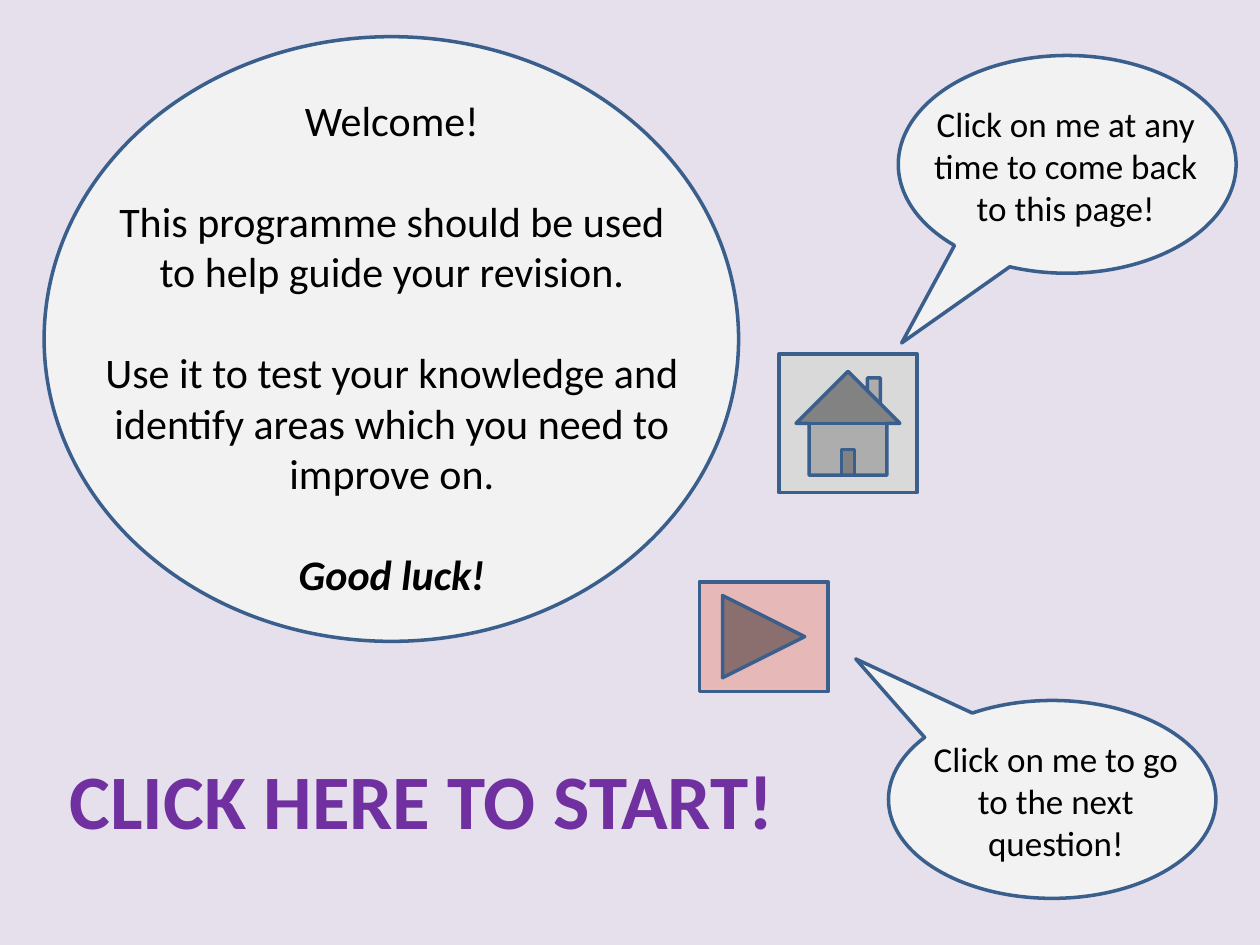
"""Builds the welcome slide of a revision quiz, with its navigation buttons."""
from pptx import Presentation
from pptx.dml.color import RGBColor
from pptx.enum.shapes import MSO_SHAPE
from pptx.enum.text import MSO_ANCHOR, PP_ALIGN
from pptx.util import Cm, Pt

ELLIPSE = MSO_SHAPE.OVAL
CALLOUT = MSO_SHAPE.OVAL_CALLOUT
HOME = MSO_SHAPE.ACTION_BUTTON_HOME
NEXT = MSO_SHAPE.ACTION_BUTTON_FORWARD_OR_NEXT
MIDDLE = MSO_ANCHOR.MIDDLE
CENTER = PP_ALIGN.CENTER

LILAC = RGBColor(0xE6, 0xE0, 0xEC)
PALE_GREY = RGBColor(0xF2, 0xF2, 0xF2)
GREY = RGBColor(0xD9, 0xD9, 0xD9)
PINK = RGBColor(0xE6, 0xB9, 0xB8)
BLUE = RGBColor(0x3A, 0x5F, 0x8C)
BLACK = RGBColor(0, 0, 0)
PURPLE = RGBColor(0x70, 0x30, 0xA0)

FONT = "Calibri"
PARAGRAPH_GAP = 29

WELCOME = [
    "Welcome!",
    "This programme should be used to help guide your revision.",
    "Use it to test your knowledge and identify areas which you need to improve on.",
    "Good luck!",
]
HOME_HINT = ["Click on me at any time to come back to this page!"]
NEXT_HINT = ["Click on me to go to the next question!"]
START = ["CLICK HERE TO START!"]

SHAPES = [
    (ELLIPSE, (0.89, 0.74, 14, 12.19), PALE_GREY, 0, ()),
    (HOME, (15.7, 7.14, 2.79, 2.79), GREY, 0, ()),
    (CALLOUT, (18.11, 1.12, 6.81, 4.39), PALE_GREY, 0, (-0.49, 0.82)),
    (NEXT, (14.1, 11.73, 2.59, 2.21), PINK, 0, ()),
    (CALLOUT, (17.91, 14.12, 6.6, 3.99), PALE_GREY, 180, (0.6, 0.71)),
]
TEXTS = [
    (WELCOME, (1.7, 1.73, 12.4, 10.52), 24, BLACK),
    (HOME_HINT, (18.49, 1.93, 5.99, 2.82), 20, BLACK),
    (NEXT_HINT, (18.29, 14.73, 5.99, 2.82), 20, BLACK),
    (START, (0.71, 13.16, 15.6, 5.89), 44, PURPLE),
]


def add_outlined_shape(slide, kind, place, fill, rotation, adjustments):
    shape = slide.shapes.add_shape(kind, *map(Cm, place))
    shape.shadow.inherit = False
    shape.fill.solid()
    shape.fill.fore_color.rgb = fill
    shape.line.color.rgb = BLUE
    shape.line.width = Pt(2)
    shape.rotation = rotation
    for index, value in enumerate(adjustments):
        shape.adjustments[index] = value


def add_message(slide, lines, place, size, color):
    frame = slide.shapes.add_textbox(*map(Cm, place)).text_frame
    frame.word_wrap = True
    frame.vertical_anchor = MIDDLE
    frame.text = "\n".join(lines)
    for index, paragraph in enumerate(frame.paragraphs):
        paragraph.alignment = CENTER
        paragraph.space_before = Pt(PARAGRAPH_GAP if index else 0)
        paragraph.font.name = FONT
        paragraph.font.size = Pt(size)
        paragraph.font.color.rgb = color
        paragraph.font.bold = lines is START
    return frame


def main():
    deck = Presentation()
    deck.slide_width, deck.slide_height = Cm(25.4), Cm(19.05)
    slide = deck.slides.add_slide(deck.slide_layouts[6])
    slide.background.fill.solid()
    slide.background.fill.fore_color.rgb = LILAC

    for shape in SHAPES:
        add_outlined_shape(slide, *shape)
    messages = [add_message(slide, *text) for text in TEXTS]

    good_luck = messages[0].paragraphs[-1].font
    good_luck.bold = good_luck.italic = True
    deck.save("out.pptx")


if __name__ == "__main__":
    main()
